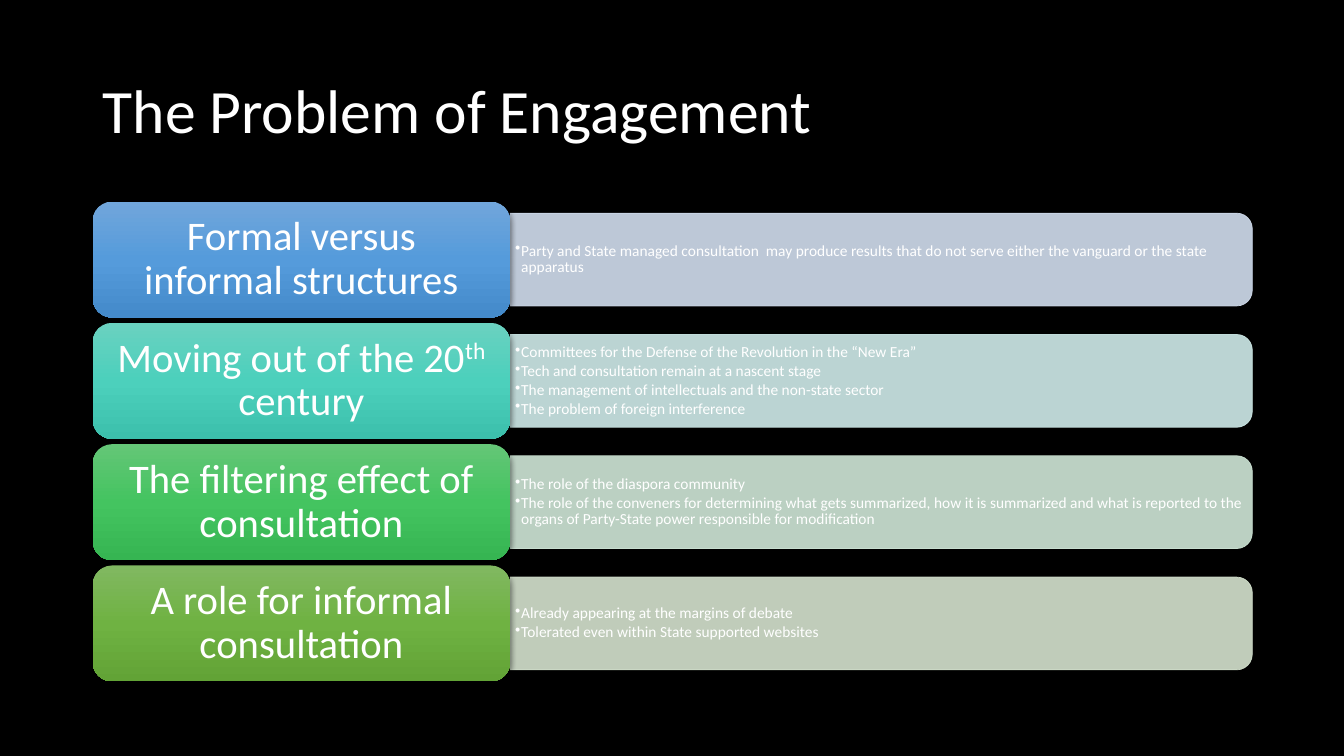
from copy import deepcopy

from lxml import etree
from pptx import Presentation
from pptx.dml.color import RGBColor
from pptx.enum.shapes import MSO_SHAPE
from pptx.enum.text import MSO_ANCHOR, MSO_AUTO_SIZE, PP_ALIGN
from pptx.oxml import parse_xml
from pptx.oxml.ns import nsdecls, qn
from pptx.util import Inches, Pt

LABEL_SHAPE = MSO_SHAPE.ROUNDED_RECTANGLE
PANEL_SHAPE = MSO_SHAPE.ROUND_2_SAME_RECTANGLE
MIDDLE = MSO_ANCHOR.MIDDLE
NO_AUTOFIT = MSO_AUTO_SIZE.NONE
LEFT, CENTER = PP_ALIGN.LEFT, PP_ALIGN.CENTER

THEME = {
    "background": RGBColor.from_string("000000"),
    "title": {"name": "Calibri", "size": Pt(44)},
    "label": {"name": "Calibri", "size": Pt(29)},
    "bullet": {"name": "Calibri", "size": Pt(11)},
    "text": RGBColor.from_string("FFFFFF"),
    "blue": ("D2DEEF", ("71A6DB", "559BDB", "448ACA")),
    "teal": ("D0ECEA", ("6AD1C0", "4CD0BC", "3CC0AC")),
    "green": ("D0E7D8", ("64C677", "44C460", "36B552")),
    "olive": ("D5E3CF", ("81B861", "6FB242", "62A336")),
}

# Each label is a list of (text, is superscript) pieces.
TOPICS = [
    ("blue", [("Formal versus informal structures", False)], [
        "Party and State managed consultation  may produce results that do not "
        "serve either the vanguard or the state apparatus",
    ]),
    ("teal", [("Moving out of the 20", False), ("th", True), (" century", False)], [
        "Committees for the Defense of the Revolution in the “New Era”",
        "Tech and consultation remain at a nascent stage",
        "The management of intellectuals and the non-state sector",
        "The problem of foreign interference",
    ]),
    ("green", [("The filtering effect of consultation", False)], [
        "The role of the diaspora community",
        "The role of the conveners for determining what gets summarized, how it is "
        "summarized and what is reported to the organs of Party-State power "
        "responsible for modification",
    ]),
    ("olive", [("A role for informal consultation", False)], [
        "Already appearing at the margins of debate",
        "Tolerated even within State supported websites",
    ]),
]

ROW_TOP, ROW_PITCH = 2, 3.61 / 3
LABEL_LEFT, LABEL_WIDTH, LABEL_HEIGHT = 0.92, 4.14, 1.15
PANEL_LEFT = LABEL_LEFT + LABEL_WIDTH
PANEL_WIDTH, PANEL_HEIGHT = 7.36, 0.92
BULLETS_WIDTH, BULLETS_HEIGHT = 7.32, 0.83

SHADOW = (
    f'<a:outerShdw {nsdecls("a")} blurRad="57150" dist="19050" dir="5400000" '
    'algn="ctr" rotWithShape="0"><a:srgbClr val="000000">'
    '<a:alpha val="63000"/></a:srgbClr></a:outerShdw>'
)


def style_paragraph(paragraph, role, alignment):
    paragraph.alignment = alignment
    paragraph.line_spacing = 0.9
    for run in paragraph.runs:
        for attribute, value in THEME[role].items():
            setattr(run.font, attribute, value)
        run.font.color.rgb = THEME["text"]


def set_frame(frame, side, edge):
    """Centre the text vertically, wrap it and set its margins in inches."""
    values = {
        "word_wrap": True, "auto_size": NO_AUTOFIT, "vertical_anchor": MIDDLE,
        "margin_left": Inches(side), "margin_right": Inches(side),
        "margin_top": Inches(edge), "margin_bottom": Inches(edge),
    }
    for attribute, value in values.items():
        setattr(frame, attribute, value)


presentation = Presentation()
presentation.slide_width = Inches(13.33)
presentation.slide_height = Inches(7.5)
slide = presentation.slides.add_slide(presentation.slide_layouts[5])
slide.background.fill.solid()
slide.background.fill.fore_color.rgb = THEME["background"]

title = slide.shapes.title
title.left, title.top = Inches(0.92), Inches(0.4)
title.width, title.height = Inches(11.5), Inches(1.45)
title.text_frame.text = "The Problem of Engagement"
set_frame(title.text_frame, 0.1, 0.05)
style_paragraph(title.text_frame.paragraphs[0], "title", LEFT)

for row, (hue, label_pieces, points) in enumerate(TOPICS):
    panel_color, label_colors = THEME[hue]
    top = ROW_TOP + row * ROW_PITCH
    middle = top + LABEL_HEIGHT / 2

    # The panel is an upright tab turned so that its round corners face right.
    panel = slide.shapes.add_shape(
        PANEL_SHAPE,
        Inches(PANEL_LEFT + (PANEL_WIDTH - PANEL_HEIGHT) / 2),
        Inches(middle - PANEL_WIDTH / 2),
        Inches(PANEL_HEIGHT), Inches(PANEL_WIDTH))
    panel.rotation = 90
    panel.line.width = Pt(0.5)
    for fill in (panel.fill, panel.line.fill):
        fill.solid()
        fill.fore_color.rgb = RGBColor.from_string(panel_color)
    panel.shadow.inherit = False
    for color in panel.element.spPr.iter(qn("a:srgbClr")):
        etree.SubElement(color, qn("a:alpha"), val="90000")

    bullets = slide.shapes.add_textbox(
        Inches(PANEL_LEFT), Inches(middle - BULLETS_HEIGHT / 2),
        Inches(BULLETS_WIDTH), Inches(BULLETS_HEIGHT)).text_frame
    set_frame(bullets, 0.05, 0.02)
    bullets.text = "\n".join(points)
    for paragraph in bullets.paragraphs:
        properties = paragraph._p.get_or_add_pPr()
        properties.set("marL", str(Inches(0.06)))
        properties.set("indent", str(Inches(-0.06)))
        etree.SubElement(properties, qn("a:buChar"), char="•")
        paragraph.level = 1
        paragraph.space_after = Pt(1.65)
        style_paragraph(paragraph, "bullet", LEFT)

    label = slide.shapes.add_shape(
        LABEL_SHAPE, Inches(LABEL_LEFT), Inches(top),
        Inches(LABEL_WIDTH), Inches(LABEL_HEIGHT))
    label.fill.gradient()
    label.fill.gradient_angle = 270
    stop_list = label.element.spPr.find(".//" + qn("a:gsLst"))
    stop_list.insert(1, deepcopy(stop_list[0]))
    for position, (stop, color) in enumerate(zip(label.fill.gradient_stops, label_colors)):
        stop.position = position / 2
        stop.color.rgb = RGBColor.from_string(color)
    label.line.fill.background()
    label.shadow.inherit = False
    label.element.spPr.find(qn("a:effectLst")).append(parse_xml(SHADOW))

    set_frame(label.text_frame, 0.17, 0.12)
    heading = label.text_frame.paragraphs[0]
    for text, is_superscript in label_pieces:
        run = heading.add_run()
        run.text = text
        if is_superscript:
            run.font._element.set("baseline", "30000")
    style_paragraph(heading, "label", CENTER)

presentation.save("out.pptx")
